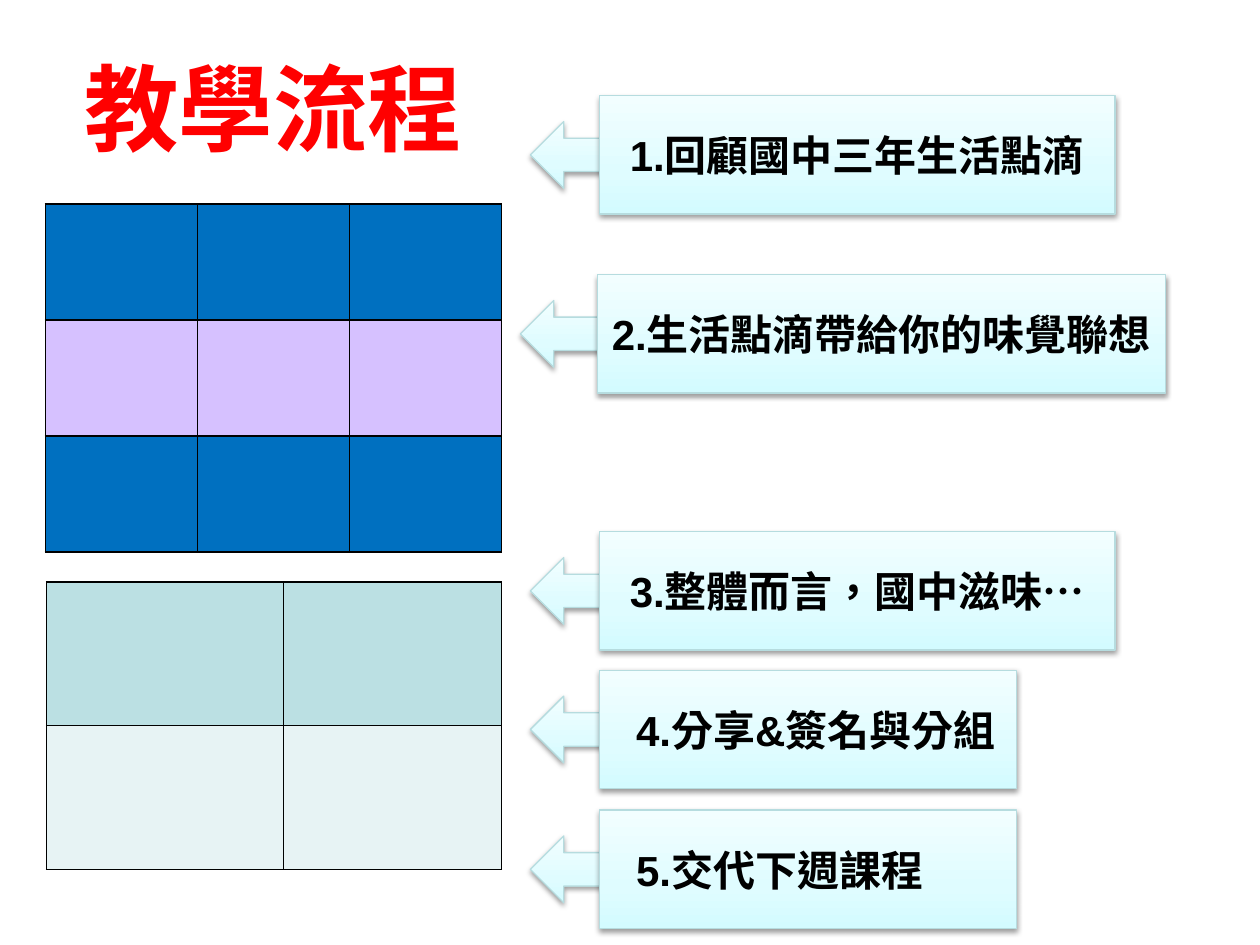
from copy import deepcopy

from lxml import etree
from pptx import Presentation
from pptx.dml.color import RGBColor
from pptx.enum.shapes import MSO_SHAPE
from pptx.enum.text import MSO_ANCHOR, PP_ALIGN
from pptx.oxml.ns import qn
from pptx.util import Emu, Inches, Pt

RECTANGLE, LEFT_ARROW = MSO_SHAPE.RECTANGLE, MSO_SHAPE.LEFT_ARROW
MIDDLE = MSO_ANCHOR.MIDDLE
CENTER, LEFT = PP_ALIGN.CENTER, PP_ALIGN.LEFT
CJK_FONT = "Noto Sans CJK SC"

COLORS = {
    "title": "FF0000", "text": "000000", "border": "000000", "outline": "B6DCDF",
    "blue": "0070C0", "violet": "9966FF", "teal": "BBE0E3", "pale": "E7F3F4",
}
GRADIENT = [(0, "D3FBFF"), (0.35, "DFFCFF"), (1, "F2FEFF")]


def write(shape, text, size, font_name, color, alignment):
    frame = shape.text_frame
    frame.word_wrap = True
    frame.vertical_anchor = MIDDLE
    paragraph = frame.paragraphs[0]
    paragraph.alignment = alignment
    run = paragraph.add_run()
    run.text = text
    run.font.size = Pt(size)
    run.font.bold = True
    run.font.name = font_name
    run.font.color.rgb = RGBColor.from_string(COLORS[color])
    properties = run._r.get_or_add_rPr()
    properties.set("lang", "zh-TW")
    etree.SubElement(properties, qn("a:ea"), typeface=CJK_FONT)
    return paragraph


def add_glossy(shapes, preset, left, top, width, height):
    """Add a shape with the three-stop gradient, thin outline and soft shadow."""
    shape = shapes.add_shape(preset, Inches(left), Inches(top), Inches(width), Inches(height))
    shape.fill.gradient()
    shape.fill.gradient_angle = 90
    stop_list = shape._element.spPr.find(".//" + qn("a:gsLst"))
    stop_list.insert(1, deepcopy(stop_list[0]))
    for stop, (position, color) in zip(shape.fill.gradient_stops, GRADIENT):
        stop.position = position
        stop.color.rgb = RGBColor.from_string(color)
    shape.line.color.rgb = RGBColor.from_string(COLORS["outline"])
    shape.line.width = Pt(0.75)
    shape.shadow.inherit = False
    effects = shape._element.spPr.find(qn("a:effectLst"))
    shadow = etree.SubElement(effects, qn("a:outerShdw"), blurRad=str(Pt(3.1)),
                              dist=str(Pt(1.6)), dir="5400000", rotWithShape="0")
    shade = etree.SubElement(shadow, qn("a:srgbClr"), val="000000")
    etree.SubElement(shade, qn("a:alpha"), val="38000")
    return shape


presentation = Presentation()
presentation.slide_width = Inches(10)
presentation.slide_height = Inches(7.5)
slide = presentation.slides.add_slide(presentation.slide_layouts[6])

title = slide.shapes.add_textbox(Inches(0.36), Inches(0.3), Inches(3.62), Inches(1.09))
write(title, "教學流程", 54, CJK_FONT, "title", CENTER)

# Tables: left, top, column widths, row height, one colour per row
TABLES = [
    (0.36, 1.62, [3.62 / 3] * 3, 0.92, ["blue", "violet", "blue"]),
    (0.37, 4.62, [1.88, 1.73], 1.14, ["teal", "pale"]),
]
for left, top, widths, row_height, row_colors in TABLES:
    table = slide.shapes.add_table(
        len(row_colors), len(widths), Inches(left), Inches(top),
        Inches(sum(widths)), Inches(row_height * len(row_colors))).table
    for column, width in zip(table.columns, widths):
        column.width = Inches(width)
    for row, color in zip(table.rows, row_colors):
        row.height = Inches(row_height)
        for cell in row.cells:
            properties = cell._tc.get_or_add_tcPr()
            for side in ("a:lnL", "a:lnR", "a:lnT", "a:lnB"):
                border = etree.SubElement(properties, qn(side), w=str(Pt(1)))
                paint = etree.SubElement(border, qn("a:solidFill"))
                etree.SubElement(paint, qn("a:srgbClr"), val=COLORS["border"])
            cell.fill.solid()
            cell.fill.fore_color.rgb = RGBColor.from_string(COLORS[color])
            if color == "violet":
                tint = properties.find(qn("a:solidFill"))[0]
                etree.SubElement(tint, qn("a:alpha"), val="40000")

# Steps: text, box left, box top, box width, arrow left, arrow width, alignment
BOX_HEIGHT, ARROW_HEIGHT = 0.94, 0.53
STEPS = [
    ("1.回顧國中三年生活點滴", 4.76, 0.76, 4.09, 4.21, 0.63, CENTER),
    ("2.生活點滴帶給你的味覺聯想", 4.74, 2.18, 4.51, 4.13, 0.69, CENTER),
    ("3.整體而言，國中滋味…", 4.76, 4.22, 4.09, 4.21, 0.63, CENTER),
    ("4.分享&簽名與分組", 4.76, 5.32, 3.31, 4.21, 0.63, LEFT),
    ("5.交代下週課程", 4.76, 6.43, 3.31, 4.21, 0.63, LEFT),
]
for text, left, top, width, arrow_left, arrow_width, alignment in STEPS:
    group = slide.shapes.add_group_shape()
    arrow_top = top + (BOX_HEIGHT - ARROW_HEIGHT) / 2
    add_glossy(group.shapes, LEFT_ARROW, arrow_left, arrow_top, arrow_width, ARROW_HEIGHT)
    box = add_glossy(group.shapes, RECTANGLE, left, top, width, BOX_HEIGHT)
    paragraph = write(box, text, 24, "Arial", "text", alignment)
    if alignment == LEFT:
        paragraph._p.get_or_add_pPr().set("indent", str(Inches(0.19)))

presentation.save("out.pptx")
